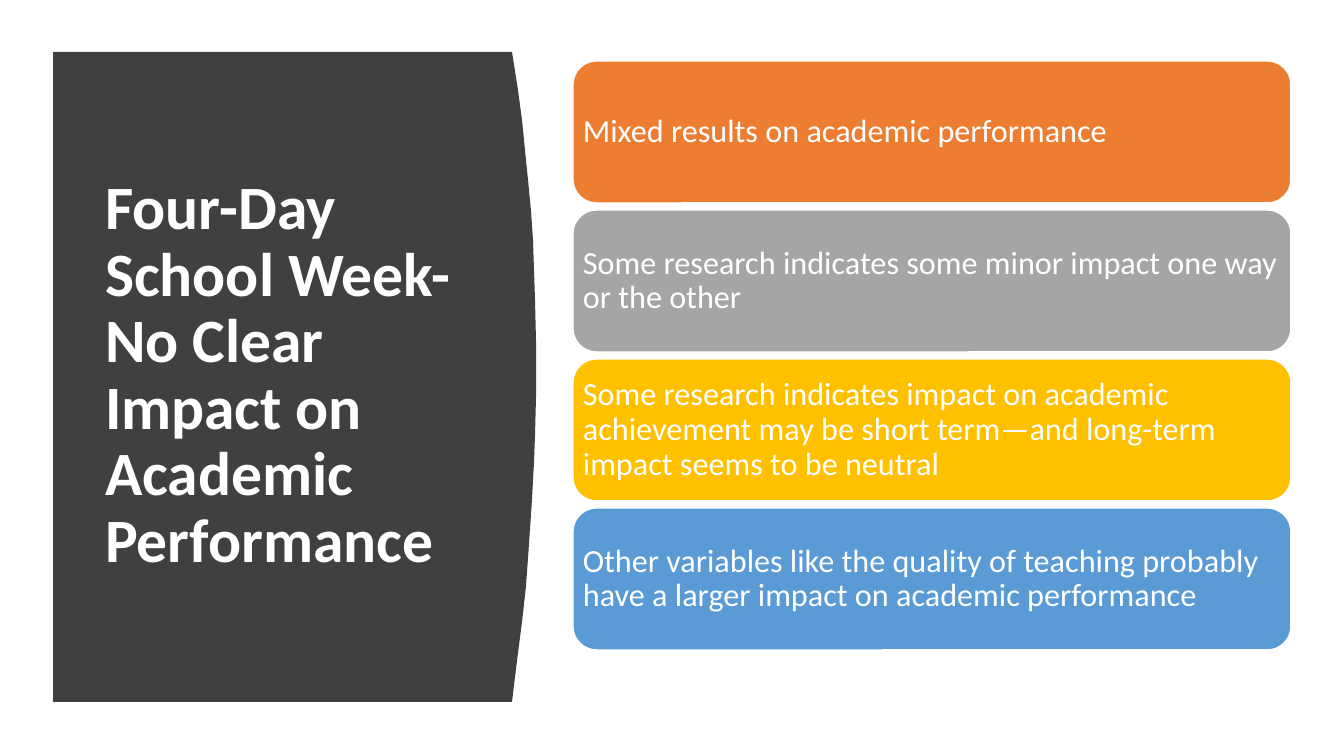
from pptx import Presentation
from pptx.dml.color import RGBColor
from pptx.enum.shapes import MSO_SHAPE
from pptx.enum.text import MSO_ANCHOR, MSO_AUTO_SIZE, PP_ALIGN
from pptx.util import Pt

ROUND = MSO_SHAPE.ROUNDED_RECTANGLE
MIDDLE, LEFT, FIXED = MSO_ANCHOR.MIDDLE, PP_ALIGN.LEFT, MSO_AUTO_SIZE.NONE

# Content
TITLE = "Four-Day School Week-\vNo Clear Impact on Academic Performance"
CARDS = [
    ("Mixed results on academic performance", "orange"),
    ("Some research indicates some minor impact one way or the other", "gray"),
    ("Some research indicates impact on academic achievement may be "
     "short term—and long-term impact seems to be neutral", "gold"),
    ("Other variables like the quality of teaching probably have a "
     "larger impact on academic performance", "blue"),
]
COLORS = {"dark": "404040", "white": "FFFFFF", "orange": "ED7D31",
          "gray": "A5A5A5", "gold": "FFC000", "blue": "5B9BD5"}
FONT = "Calibri"

# Layout in px
WIDE, HIGH = 1344, 756
SCALE = 12192000 / WIDE
PANEL_X = 53
CURVE = [(512, 52), (518, 90), (522, 120), (525, 150), (528, 180), (531, 211),
         (533, 240), (534, 270), (535, 299), (536, 342), (536, 397),
         (535, 436), (534, 462), (532, 499), (529, 544), (526, 586),
         (522, 622), (518, 653), (515, 677), (512, 702)]
TITLE_BOX = (95, 112, 377, 528)
CARD_X, CARD_Y, CARD_W, CARD_H, PITCH = 573, 61, 718, 142, 149
INSET = 3


def px(n):
    return round(n * SCALE)


def color(name):
    return RGBColor.from_string(COLORS[name])


def paint(shape, fill):
    shape.shadow.inherit = False
    shape.fill.solid()
    shape.fill.fore_color.rgb = color(fill)


def write(shape, text, size, bold=False):
    frame = shape.text_frame
    frame.word_wrap = True
    frame.auto_size = FIXED
    frame.vertical_anchor = MIDDLE
    para = frame.paragraphs[0]
    para.text = text
    para.alignment = LEFT
    para.line_spacing = 0.9
    for run in para.runs:
        font = run.font
        font.name, font.size, font.bold = FONT, Pt(size), bold
        font.color.rgb = color("white")


deck = Presentation()
deck.slide_width, deck.slide_height = px(WIDE), px(HIGH)
slide = deck.slides.add_slide(deck.slide_layouts[5])
shapes = slide.shapes

# Dark panel with a curved right side
top, end = CURVE[0][1], CURVE[-1][1]
form = shapes.build_freeform(PANEL_X, top, scale=SCALE)
form.add_line_segments(CURVE + [(PANEL_X, end)], close=True)
panel = form.convert_to_shape()
paint(panel, "dark")
panel.line.fill.background()

# Title, raised above the panel
title = shapes.title
title.left, title.top, title.width, title.height = map(px, TITLE_BOX)
write(title, TITLE, 44, True)
panel._element.addnext(title._element)

# Stack of cards
for i, (text, fill) in enumerate(CARDS):
    card = shapes.add_shape(ROUND, px(CARD_X), px(CARD_Y + i * PITCH),
                            px(CARD_W), px(CARD_H))
    paint(card, fill)
    card.line.color.rgb = color("white")
    card.line.width = Pt(1)
    write(card, text, 23)
    frame = card.text_frame
    frame.margin_left = frame.margin_right = px(INSET)

deck.save("out.pptx")
